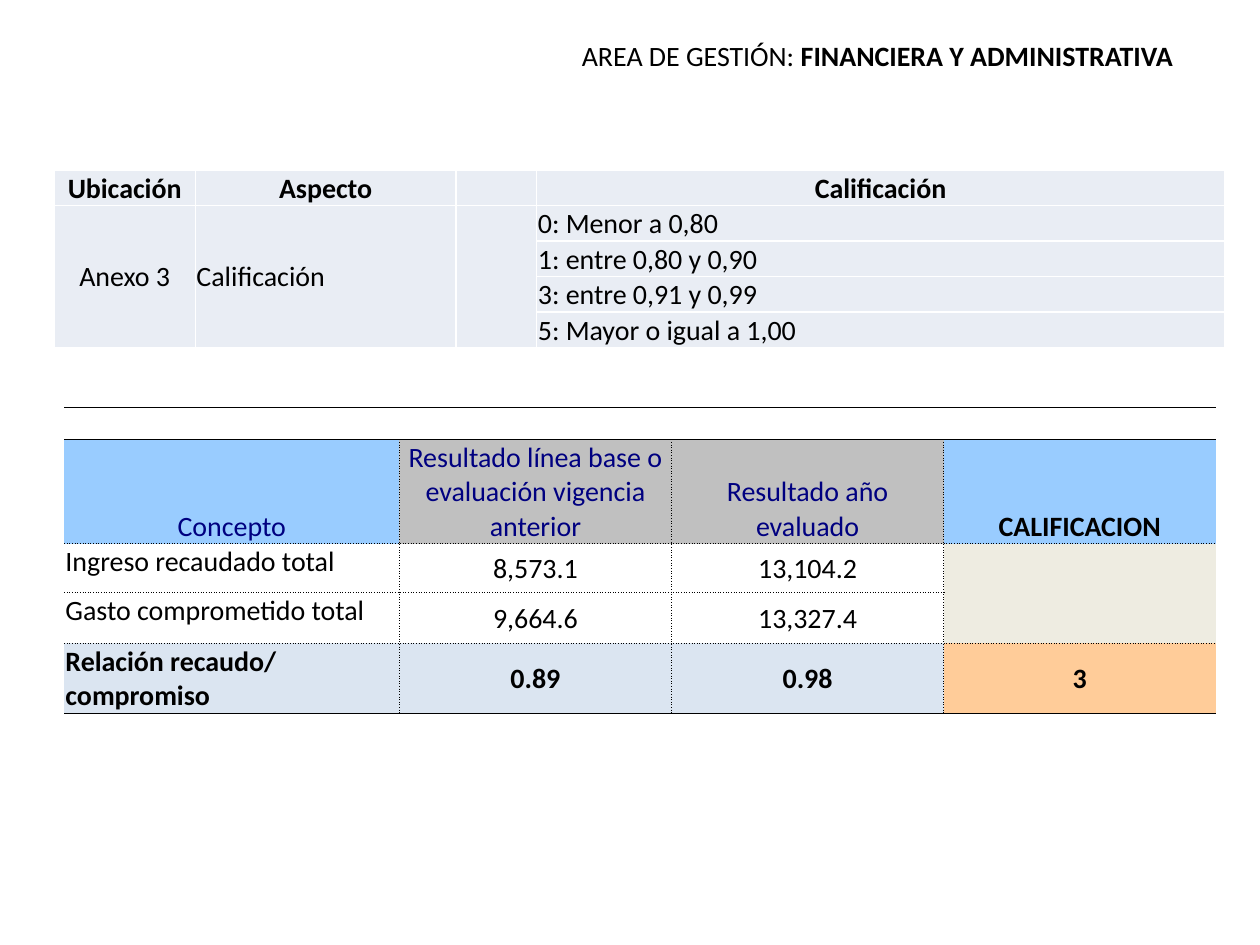
from lxml.etree import SubElement
from pptx import Presentation
from pptx.dml.color import RGBColor
from pptx.enum.text import MSO_ANCHOR, PP_ALIGN
from pptx.oxml.ns import qn
from pptx.util import Inches, Pt

BLACK = RGBColor(0, 0, 0)
WHITE = RGBColor(255, 255, 255)
NAVY = RGBColor(0, 0, 0x80)
PALE = RGBColor(0xE9, 0xED, 0xF4)
SKY = RGBColor(0x99, 0xCC, 0xFF)
GREY = RGBColor(0xC0, 0xC0, 0xC0)
CREAM = RGBColor(0xEE, 0xEC, 0xE1)
MIST = RGBColor(0xDB, 0xE5, 0xF1)
PEACH = RGBColor(0xFF, 0xCC, 0x99)

SCALE = [
    ["Ubicación", "Aspecto", "", "Calificación"],
    ["Anexo 3", "Calificación", "", "0: Menor a 0,80"],
    ["", "", "", "1: entre 0,80 y 0,90"],
    ["", "", "", "3: entre 0,91 y 0,99"],
    ["", "", "", "5: Mayor o igual a 1,00"],
]
RESULTS = [
    ["", "", "", ""],
    ["Concepto", "Resultado línea base o evaluación vigencia anterior",
     "Resultado año evaluado", "CALIFICACION"],
    ["Ingreso recaudado total", "8,573.1", "13,104.2", ""],
    ["Gasto comprometido total", "9,664.6", "13,327.4", ""],
    ["Relación recaudo/ compromiso", "0.89", "0.98", "3"],
]
FILLS = [
    [None] * 4,
    [SKY, GREY, GREY, SKY],
    [None, WHITE, WHITE, CREAM],
    [None, WHITE, WHITE, CREAM],
    [MIST, MIST, MIST, PEACH],
]


def set_font(font, color=BLACK, bold=False):
    font.name = "Calibri"
    font.size = Pt(16)
    font.bold = bold
    font.color.rgb = color


def add_edge(cell, side, color=None, width=0.5, dash="solid"):
    props = cell._tc.get_or_add_tcPr()
    line = SubElement(props, qn(f"a:ln{side}"), w=str(Pt(width)))
    if color is None:
        SubElement(line, qn("a:noFill"))
        return
    fill = SubElement(line, qn("a:solidFill"))
    SubElement(fill, qn("a:srgbClr"), val=str(color))
    SubElement(line, qn("a:prstDash"), val=dash)


def fill_cell(cell, text, fill, align, anchor, color=BLACK, bold=False):
    cell.margin_left = cell.margin_right = cell.margin_top = Inches(0.01)
    cell.margin_bottom = 0
    cell.vertical_anchor = anchor
    if fill is None:
        cell.fill.background()
    else:
        cell.fill.solid()
        cell.fill.fore_color.rgb = fill
    para = cell.text_frame.paragraphs[0]
    if text:
        para.text = text
        para.alignment = align
        set_font(para.font, color, bold)
    else:
        SubElement(para._p, qn("a:endParaRPr"), sz="1200")


def add_grid(slide, left, top, cols, rows):
    frame = slide.shapes.add_table(
        len(rows), len(cols), Inches(left), Inches(top),
        Inches(sum(cols)), Inches(sum(rows)))
    table = frame.table
    table.first_row = table.horz_banding = False
    for col, width in zip(table.columns, cols):
        col.width = Inches(width)
    for row, height in zip(table.rows, rows):
        row.height = Inches(height)
    return table


def add_scale(slide):
    table = add_grid(slide, 0.43, 1.35, [1.12, 2.07, 0.64, 5.46], [0.28] * 5)
    for r, row in enumerate(SCALE):
        for c, text in enumerate(row):
            cell = table.cell(r, c)
            for side in "LRTB":
                add_edge(cell, side, WHITE, 1)
            head = r == 0
            align = PP_ALIGN.CENTER if head or c == 0 else PP_ALIGN.LEFT
            anchor = MSO_ANCHOR.BOTTOM if head else MSO_ANCHOR.MIDDLE
            fill_cell(cell, text, PALE, align, anchor, bold=head)
    for c in range(3):
        table.cell(1, c).merge(table.cell(4, c))


def add_results(slide):
    table = add_grid(slide, 0.51, 3.23, [2.66, 2.16, 2.16, 2.16],
                     [0.26, 0.82, 0.39, 0.4, 0.55])
    for r, row in enumerate(RESULTS):
        for c, text in enumerate(row):
            cell = table.cell(r, c)
            add_edge(cell, "L", BLACK if r and c else None, dash="sysDot")
            add_edge(cell, "R", BLACK if r and c < 3 else None, dash="sysDot")
            add_edge(cell, "T", BLACK, dash="solid" if r < 2 else "sysDot")
            add_edge(cell, "B", BLACK, dash="solid" if r in (0, 4) else "sysDot")
            head = r == 1
            align = PP_ALIGN.CENTER if head or c else PP_ALIGN.LEFT
            anchor = MSO_ANCHOR.MIDDLE
            if head:
                anchor = MSO_ANCHOR.BOTTOM
            elif c == 0 and r < 4:
                anchor = MSO_ANCHOR.TOP
            color = NAVY if head and c < 3 else BLACK
            bold = r == 4 or (head and c == 3)
            fill_cell(cell, text, FILLS[r][c], align, anchor, color, bold)
    table.cell(2, 3).merge(table.cell(3, 3))


def set_title(slide):
    title = slide.shapes.title
    title.left, title.top = Inches(0.51), Inches(0.17)
    title.width, title.height = Inches(8.9), Inches(0.54)
    frame = title.text_frame
    frame.word_wrap = True
    frame.vertical_anchor = MSO_ANCHOR.MIDDLE
    para = frame.paragraphs[0]
    para.alignment = PP_ALIGN.RIGHT
    for text, bold in (("AREA DE GESTIÓN: ", False),
                       ("FINANCIERA Y ADMINISTRATIVA", True)):
        run = para.add_run()
        run.text = text
        set_font(run.font, bold=bold)


def main():
    deck = Presentation()
    deck.slide_width, deck.slide_height = Inches(10), Inches(7.5)
    slide = deck.slides.add_slide(deck.slide_layouts[5])
    set_title(slide)
    add_scale(slide)
    add_results(slide)
    deck.save("out.pptx")


if __name__ == "__main__":
    main()
